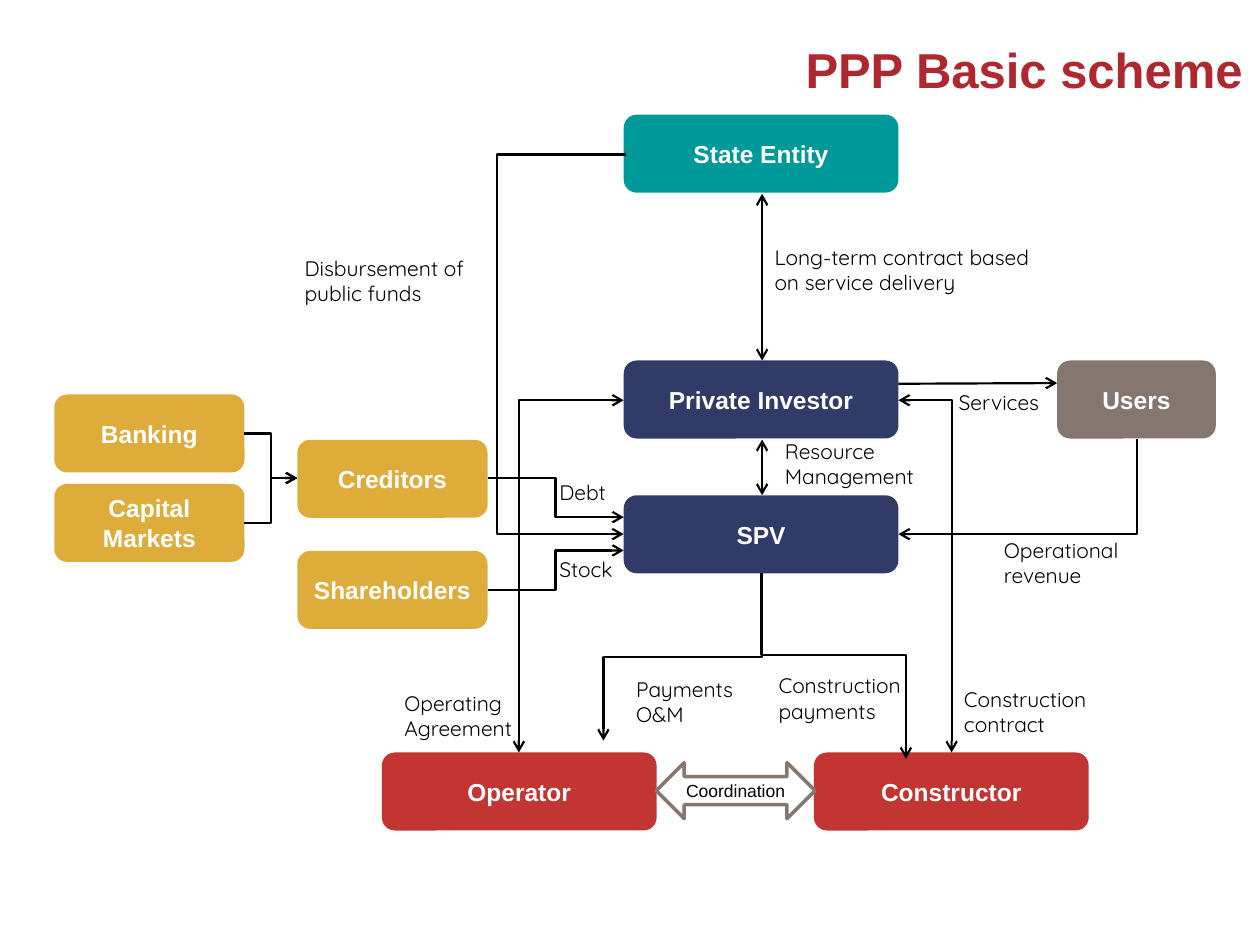
from lxml import etree
from pptx import Presentation
from pptx.dml.color import RGBColor
from pptx.enum.shapes import MSO_CONNECTOR, MSO_SHAPE
from pptx.enum.text import MSO_ANCHOR, PP_ALIGN
from pptx.oxml.ns import qn
from pptx.util import Pt

STRAIGHT, ELBOW = MSO_CONNECTOR.STRAIGHT, MSO_CONNECTOR.ELBOW
ROUNDED, DOUBLE_ARROW = MSO_SHAPE.ROUNDED_RECTANGLE, MSO_SHAPE.LEFT_RIGHT_ARROW
MIDDLE = MSO_ANCHOR.MIDDLE
CENTER, RIGHT, LEFT = PP_ALIGN.CENTER, PP_ALIGN.RIGHT, PP_ALIGN.LEFT

COLORS = {
    "navy": "313B68", "teal": "009999", "taupe": "85776F", "red": "C33533",
    "gold": "DEAC3B", "title": "AF272F", "black": "000000", "white": "FFFFFF",
}
BOX_HEIGHT = 44.6
WIDE, MEDIUM, NARROW = 157, 108.7, 90.7

presentation = Presentation()
presentation.slide_width, presentation.slide_height = Pt(720), Pt(540)
slide = presentation.slides.add_slide(presentation.slide_layouts[5])
shapes = slide.shapes


def write(shape, text, font, size, color, align, bold=False):
    shape.text_frame.text = text
    for paragraph in shape.text_frame.paragraphs:
        paragraph.alignment = align
        for run in paragraph.runs:
            run.font.name, run.font.size, run.font.bold = font, Pt(size), bold
            run.font.color.rgb = RGBColor.from_string(COLORS[color])


def connect(start, end, route="straight", bend=0.5, both_ends=False):
    (x1, y1), (x2, y2) = start, end
    kind = STRAIGHT if route == "straight" else ELBOW
    connector = shapes.add_connector(kind, Pt(x1), Pt(y1), Pt(x2), Pt(y2))
    properties = connector._element.spPr
    if route.startswith("vertical"):
        across, down = abs(x2 - x1), y2 - y1
        connector.left = Pt((x1 + x2 - down) / 2)
        connector.top = Pt((y1 + y2 - across) / 2)
        connector.width, connector.height = Pt(down), Pt(across)
        transform = properties.find(qn("a:xfrm"))
        transform.set("rot", "16200000" if x2 > x1 else "5400000")
        transform.set("flipH", "1" if x2 > x1 else "0")
    geometry = properties.find(qn("a:prstGeom"))
    if route.endswith("corner"):
        geometry.set("prst", "bentConnector2")
    elif route != "straight":
        guides = geometry.find(qn("a:avLst"))
        if guides is None:
            guides = etree.SubElement(geometry, qn("a:avLst"))
        etree.SubElement(guides, qn("a:gd"), name="adj1", fmla=f"val {round(bend * 100000)}")
    connector.line.width = Pt(1.25)
    connector.line.color.rgb = RGBColor.from_string(COLORS["black"])
    line = properties.find(qn("a:ln"))
    for tag in ("a:headEnd", "a:tailEnd") if both_ends else ("a:tailEnd",):
        etree.SubElement(line, qn(tag), type="arrow")
    etree.SubElement(properties, qn("a:effectLst"))


title = shapes.title
title.left, title.top, title.width, title.height = Pt(236.2), Pt(18.7), Pt(481), Pt(41)
title.text_frame.vertical_anchor = MIDDLE
write(title, "PPP Basic scheme", "Arial", 28, "title", RIGHT, bold=True)

boxes = [
    ("State Entity", 356.4, 65.5, WIDE, "teal"),
    ("Private Investor", 356.4, 206, WIDE, "navy"),
    ("SPV", 356.4, 283, WIDE, "navy"),
    ("Users", 604.1, 206, NARROW, "taupe"),
    ("Operator", 218.2, 430, WIDE, "red"),
    ("Constructor", 465.1, 430, WIDE, "red"),
    ("Creditors", 169.9, 251.3, MEDIUM, "gold"),
    ("Shareholders", 169.9, 314.8, MEDIUM, "gold"),
    ("Banking", 31, 225.4, MEDIUM, "gold"),
    ("Capital Markets", 31, 276.5, MEDIUM, "gold"),
]
for text, left, top, width, color in boxes:
    box = shapes.add_shape(ROUNDED, Pt(left), Pt(top), Pt(width), Pt(BOX_HEIGHT))
    box.shadow.inherit = False
    box.fill.solid()
    box.fill.fore_color.rgb = RGBColor.from_string(COLORS[color])
    box.line.fill.background()
    frame = box.text_frame
    frame.word_wrap, frame.vertical_anchor = True, MIDDLE
    frame.margin_left = frame.margin_right = Pt(5)
    write(box, text, "Arial", 14, "white", CENTER, bold=True)

coordination = shapes.add_shape(DOUBLE_ARROW, Pt(375), Pt(435.8), Pt(NARROW), Pt(32))
coordination.shadow.inherit = False
coordination.fill.background()
coordination.line.color.rgb = RGBColor.from_string(COLORS["taupe"])
coordination.line.width = Pt(2)
frame = coordination.text_frame
frame.word_wrap, frame.vertical_anchor = False, MIDDLE
frame.margin_left = frame.margin_right = frame.margin_top = frame.margin_bottom = 0
write(coordination, "Coordination", "Arial", 10, "black", CENTER)

connect((435.5, 110.8), (435.5, 206), both_ends=True)
connect((435.5, 251.2), (435.5, 283), both_ends=True)
connect((513.4, 219.3), (604.1, 218.9))
connect((356.4, 228.7), (296.5, 430), "horizontal corner", both_ends=True)
connect((513.4, 228.7), (543.8, 430), "horizontal corner", both_ends=True)
connect((358, 88.3), (356.4, 305.2), "horizontal", bend=46.5)
connect((278.6, 273.2), (356.4, 295.5), "horizontal")
connect((278.6, 337.1), (356.4, 314.6), "horizontal")
connect((139.7, 247.7), (169.9, 273.2), "horizontal")
connect((139.7, 298.8), (169.9, 273.2), "horizontal")
connect((435.2, 327.6), (344.8, 423.2), "vertical")
connect((435.2, 327.6), (517.7, 433.6), "vertical", bend=0.44)
connect((649.5, 250.8), (513.4, 305.2), "vertical corner")

labels = [
    ("Long-term contract based\non service delivery", 435.5, 136, 187),
    ("Disbursement of\npublic funds", 167, 142.5, 139),
    ("Construction\vcontract", 543.8, 388.8, 132.5),
    ("Operating Agreement", 224, 391, 108.7),
    ("Debt", 312.5, 270.7, 108.7),
    ("Stock", 312.5, 314.6, 108.7),
    ("Services", 540.7, 218.9, 75.6),
    ("Resource Management", 441.4, 247, 121),
    ("Payments\vO&M", 356.4, 383, 72.7),
    ("Construction payments", 437.8, 381, 108.7),
    ("Operational revenue", 566.6, 303.8, 99.4),
]
for text, left, top, width in labels:
    height = 21.6 if text in ("Debt", "Stock", "Services") else 36.5
    label = shapes.add_textbox(Pt(left), Pt(top), Pt(width), Pt(height))
    label.text_frame.word_wrap = True
    write(label, text, "Quicksand", 12, "black", LEFT)

presentation.save("out.pptx")
